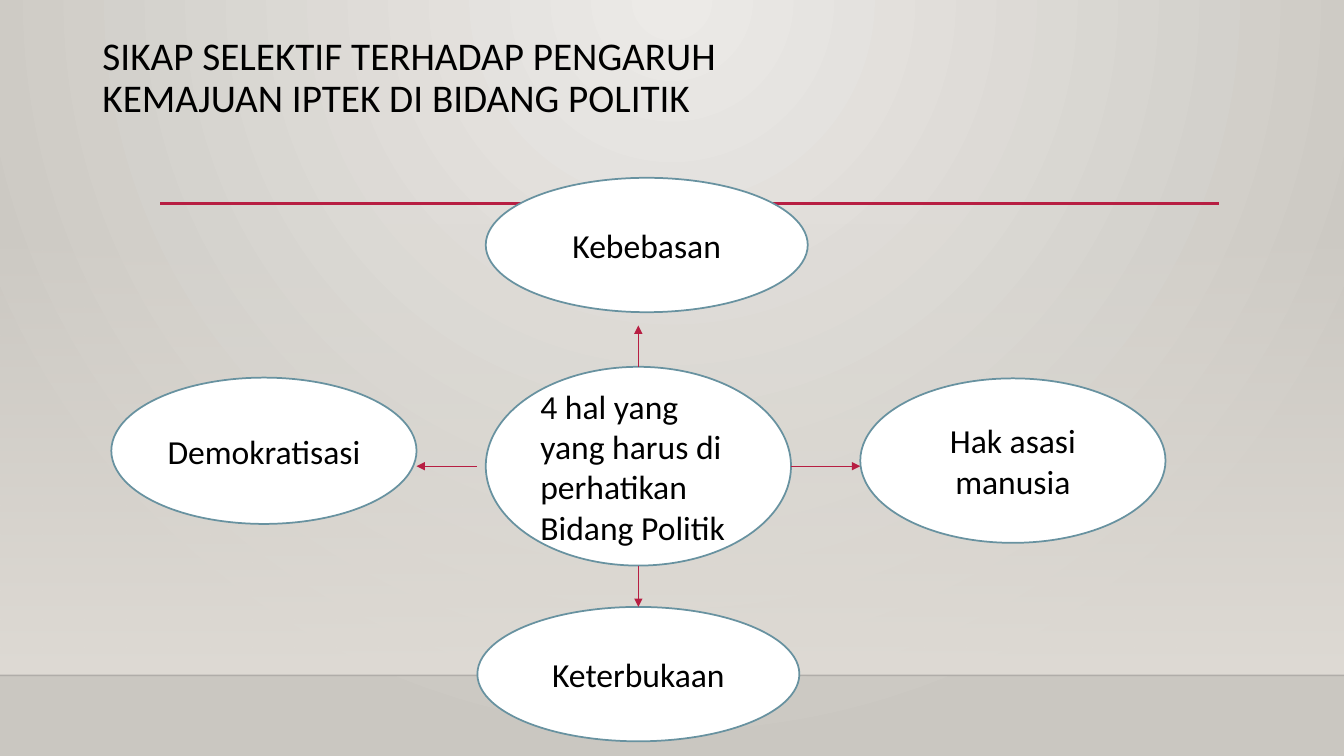
from lxml import etree
from pptx import Presentation, oxml
from pptx.dml.color import RGBColor
from pptx.enum import shapes, text
from pptx.oxml import ns
from pptx.util import Pt

COLORS = {"ink": "000000", "white": "FFFFFF", "outline": "6892A0", "accent": "B71E42",
          "floor": "000001", "glow": "ECEAE7", "edge": "CAC7C1", "wall": "DFDBD5"}
WIDTH, HEIGHT = 960, 540
CENTER = "4 hal yang yang harus di perhatikan Bidang Politik"
TOPICS = [("Demokratisasi", -267.5, -14, 218, 104.5),
          ("Keterbukaan", 0, 145.5, 230, 96),
          ("Kebebasan", 6, -161, 230, 96),
          ("Hak asasi manusia", 267.5, -7, 218, 117.5)]
ARROWS = [(109, 0, 158.5, 0), (0, 71, 0, 100.5), (-115.5, 0, -158.5, 0), (0, -71, 0, -100.5)]


def color(name):
    """Return the named colour."""
    return RGBColor.from_string(COLORS[name])


def set_gradient(fill, owner, first, last, direction, alpha=100):
    """Fill the owner element with a two-stop gradient."""
    fill.gradient()
    old = next(owner.iter(ns.qn("a:gradFill")))
    new = oxml.parse_xml(
        f'<a:gradFill {ns.nsdecls("a")} rotWithShape="1"><a:gsLst>'
        f'<a:gs pos="0"><a:srgbClr val="{COLORS[first]}"><a:alpha val="{alpha * 1000}"/></a:srgbClr></a:gs>'
        f'<a:gs pos="100000"><a:srgbClr val="{COLORS[last]}"/></a:gs></a:gsLst>{direction}</a:gradFill>')
    old.getparent().replace(old, new)


def add_line(page, start, end, name, weight):
    """Draw a straight line without a shadow."""
    ends = [Pt(value) for value in (*start, *end)]
    line = page.shapes.add_connector(shapes.MSO_CONNECTOR.STRAIGHT, *ends)
    line.line.color.rgb = color(name)
    line.line.width = Pt(weight)
    etree.SubElement(line.element.spPr, ns.qn("a:effectLst"))
    return line


def add_backdrop(page, width, height):
    """Paint the wall, the floor edge and the rule under the title."""
    set_gradient(page.background.fill, page.element, "glow", "edge",
                 '<a:path path="circle"><a:fillToRect l="43000" t="0" r="43000" b="100000"/></a:path>')
    floor = height - 57.6
    wall = page.shapes.add_shape(shapes.MSO_SHAPE.RECTANGLE, 0, Pt(159), Pt(width), Pt(floor - 159))
    wall.shadow.inherit = False
    wall.line.fill.background()
    set_gradient(wall.fill, wall.element, "wall", "wall", '<a:lin ang="5400000" scaled="0"/>', 0)
    edge = add_line(page, (0, floor), (width, floor), "floor", 1)
    tint = next(edge.element.iter(ns.qn("a:srgbClr")))
    etree.SubElement(tint, ns.qn("a:alpha")).set("val", "20000")
    add_line(page, (114.5, 145.3), (871, 145.3), "accent", 2.5)


def style_text(frame, size, align):
    """Format the only paragraph of a frame."""
    para = frame.paragraphs[0]
    para.alignment = align
    for span in para.runs:
        span.font.name = "Calibri"
        span.font.size = Pt(size)
        span.font.color.rgb = color("ink")
    return para


def add_title(page, left, top, width, height):
    """Place the title in its box."""
    title = page.shapes.title
    title.left, title.top, title.width, title.height = Pt(left), Pt(top), Pt(width), Pt(height)
    frame = title.text_frame
    frame.text = "SIKAP SELEKTIF TERHADAP PENGARUH KEMAJUAN IPTEK DI BIDANG POLITIK"
    frame.word_wrap = True
    frame.auto_size = text.MSO_AUTO_SIZE.NONE
    frame.vertical_anchor = text.MSO_ANCHOR.TOP
    style_text(frame, 28, text.PP_ALIGN.LEFT).line_spacing = 0.9


def add_bubble(page, label, x, y, width, height, align=text.PP_ALIGN.CENTER):
    """Draw a labelled ellipse around a centre point."""
    bubble = page.shapes.add_shape(shapes.MSO_SHAPE.OVAL, Pt(x - width / 2), Pt(y - height / 2),
                                   Pt(width), Pt(height))
    bubble.shadow.inherit = False
    bubble.fill.solid()
    bubble.fill.fore_color.rgb = color("white")
    bubble.line.color.rgb = color("outline")
    bubble.line.width = Pt(1.25)
    frame = bubble.text_frame
    frame.text = label
    frame.word_wrap = True
    frame.vertical_anchor = text.MSO_ANCHOR.MIDDLE
    style_text(frame, 24, align)


def add_diagram(page, x, y):
    """Arrange the topics and arrows around the central bubble."""
    for label, dx, dy, width, height in TOPICS:
        add_bubble(page, label, x + dx, y + dy + 3, width, height)
    add_bubble(page, CENTER, x, y, 218, 142, text.PP_ALIGN.LEFT)
    for x1, y1, x2, y2 in ARROWS:
        arrow = add_line(page, (x + x1, y + y1), (x + x2, y + y2), "accent", 0.75)
        etree.SubElement(arrow.line._get_or_add_ln(), ns.qn("a:tailEnd")).set("type", "triangle")


def main():
    """Build and save the deck."""
    deck = Presentation()
    deck.slide_width, deck.slide_height = Pt(WIDTH), Pt(HEIGHT)
    page = deck.slides.add_slide(deck.slide_layouts[5])
    add_backdrop(page, WIDTH, HEIGHT)
    add_title(page, 66, 22.5, 469.5, 104.5)
    add_diagram(page, 456, 333)
    deck.save("out.pptx")


if __name__ == "__main__":
    main()
